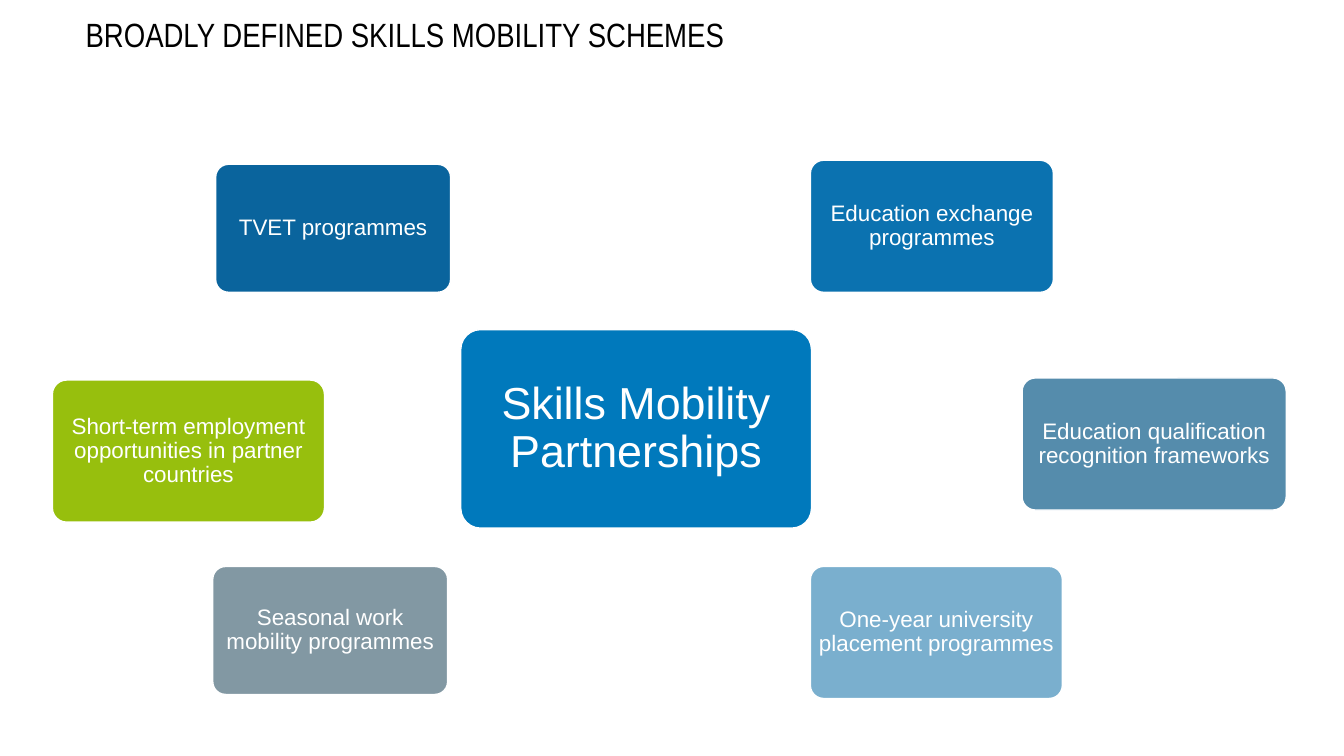
from dataclasses import dataclass

from pptx import Presentation, util as u
from pptx.dml.color import RGBColor
from pptx.enum import shapes, text

WIDTH, HEIGHT = u.Inches(13.33), u.Inches(7.5)
COLOURS = {
    "white": "FFFFFF", "black": "000000", "centre": "0079BC",
    "training": "0A649D", "exchange": "0B72B0", "recognition": "558CAC",
    "university": "7AAFCE", "seasonal": "8298A3", "short_term": "97BF0D",
}
CARD_FRAME = {
    "word_wrap": True, "vertical_anchor": text.MSO_ANCHOR.MIDDLE,
    **{f"margin_{side}": u.Inches(0.01) for side in ("left", "top", "right", "bottom")},
}
CARD_PARA = {"alignment": text.PP_ALIGN.CENTER, "line_spacing": 0.9}
TITLE_FRAME = {"word_wrap": True, "auto_size": text.MSO_AUTO_SIZE.SHAPE_TO_FIT_TEXT}


@dataclass(frozen=True)
class Area:
    """Percentages of the slide's width and height."""
    left: float
    top: float
    width: float
    height: float

    def lengths(self) -> tuple[int, int, int, int]:
        return (int(WIDTH * self.left / 100), int(HEIGHT * self.top / 100),
                int(WIDTH * self.width / 100), int(HEIGHT * self.height / 100))


@dataclass(frozen=True)
class Card:
    label: str
    colour: str
    area: Area
    size: int = 16


# Shared edges and sizes of the cards
RIGHT_LEFT, BOTTOM_TOP, CARD_HEIGHT = 60.3, 74.93, 17.47
SMALL_WIDTH, SMALL_HEIGHT = 17.48, 16.93

CARDS = (
    Card("TVET programmes", "training",
         Area(16.05, 21.73, SMALL_WIDTH, SMALL_HEIGHT)),
    Card("Skills Mobility Partnerships", "centre",
         Area(34.28, 43.6, 26.1, 26.27), 32),
    Card("One-year university placement programmes", "university",
         Area(RIGHT_LEFT, BOTTOM_TOP, 18.75, CARD_HEIGHT)),
    Card("Seasonal work mobility programmes", "seasonal",
         Area(15.83, BOTTOM_TOP, SMALL_WIDTH, SMALL_HEIGHT)),
    Card("Education exchange programmes", "exchange",
         Area(RIGHT_LEFT, 21.2, 18.08, CARD_HEIGHT)),
    Card("Short-term employment opportunities in partner countries", "short_term",
         Area(3.9, 50.27, 20.25, 18.8)),
    Card("Education qualification recognition frameworks", "recognition",
         Area(76.05, 50, 19.65, CARD_HEIGHT)),
)


def rgb(name: str) -> RGBColor:
    return RGBColor.from_string(COLOURS[name])


def apply(target, values: dict) -> None:
    for name, value in values.items():
        setattr(target, name, value)


def write(box, words: str, font: dict, colour: str, frame: dict, para_format: dict) -> None:
    apply(box.text_frame, frame)
    para = box.text_frame.paragraphs[0]
    apply(para, para_format)
    span = para.add_run()
    span.text = words
    apply(span.font, font)
    span.font.color.rgb = rgb(colour)


def draw_card(page, card: Card) -> None:
    box = page.shapes.add_shape(shapes.MSO_SHAPE.ROUNDED_RECTANGLE, *card.area.lengths())
    box.adjustments[0] = 0.1
    box.shadow.inherit = False
    box.fill.solid()
    box.fill.fore_color.rgb = rgb(card.colour)
    box.line.color.rgb = rgb("white")
    box.line.width = u.Pt(1)
    write(box, card.label, {"name": "Arial", "size": u.Pt(card.size)},
          "white", CARD_FRAME, CARD_PARA)


def draw_title(page) -> None:
    box = page.shapes.add_textbox(*Area(5.63, 1.2, 65.34, 6.67).lengths())
    write(box, "BROADLY DEFINED SKILLS MOBILITY SCHEMES",
          {"name": "Arial Narrow", "size": u.Pt(24)}, "black", TITLE_FRAME, {})


def main() -> None:
    deck = Presentation()
    apply(deck, {"slide_width": WIDTH, "slide_height": HEIGHT})
    page = deck.slides.add_slide(deck.slide_layouts[6])
    # Partnership in the centre, schemes around it
    for card in CARDS:
        draw_card(page, card)
    # Heading
    draw_title(page)
    deck.save("out.pptx")


if __name__ == "__main__":
    main()
